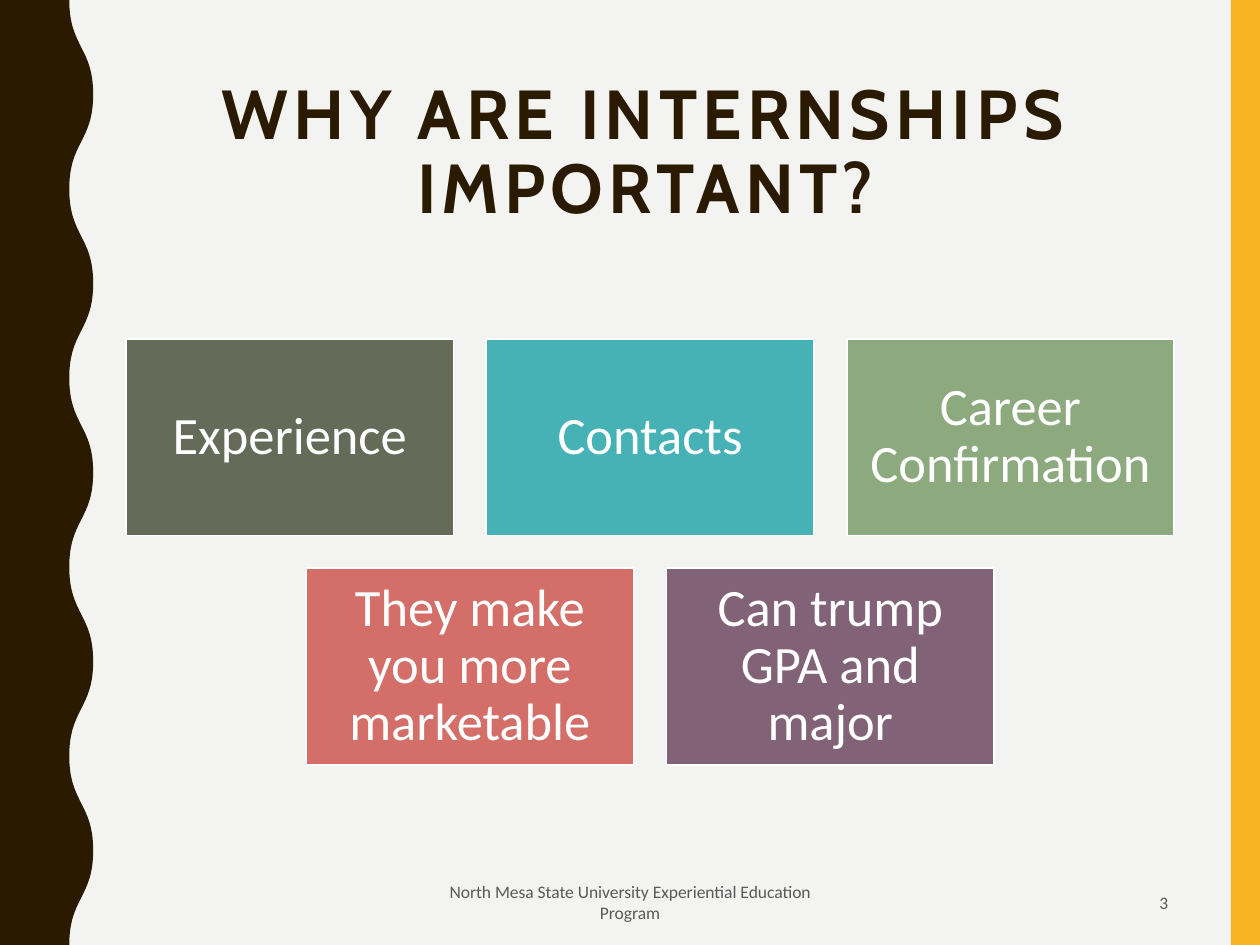
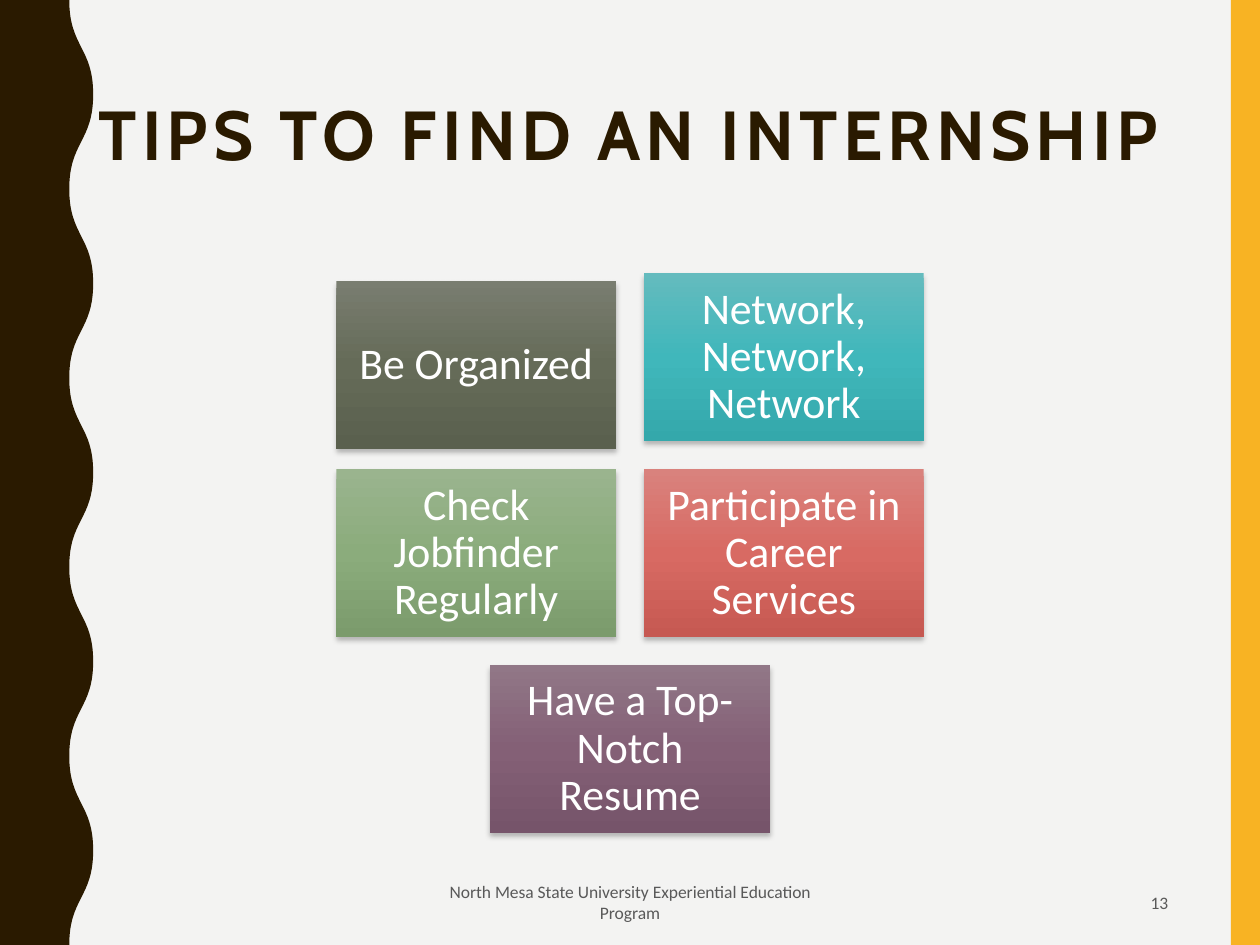
from copy import deepcopy

from lxml import etree
from pptx import Presentation
from pptx import util as u
from pptx.dml.color import RGBColor
from pptx.enum import shapes, text
from pptx.oxml.ns import qn

PAPER = RGBColor(0xF3, 0xF3, 0xF2)
BROWN = RGBColor(0x2A, 0x1A, 0x00)
GOLD = RGBColor(0xF8, 0xB3, 0x23)
GREY = RGBColor(0x59, 0x59, 0x59)
WHITE = RGBColor(0xFF, 0xFF, 0xFF)
PALE_TEAL = RGBColor(0x8F, 0xD2, 0xD4)
DEEP_TEAL = RGBColor(0x35, 0x85, 0x88)

FLAT_COLORS = [RGBColor.from_string(code) for code in
               ("656A59", "46B2B5", "8CAA7E", "D36F68", "826276")]
GRADIENTS = [[RGBColor.from_string(code) for code in codes.split()] for codes in
             ("797D70 656B58 5A604E", "64BBBE 40B7BB 34A8AB",
              "9AB48E 8BAC7C 7B9B6C", "D9827D D86A63 C65952",
              "917787 846076 76546A")]

TITLE_FONT, BODY_FONT = "Cabin", "Calibri"
SLIDE_WIDTH, SLIDE_HEIGHT = 10, 7.5
FOOTER = "North Mesa State University Experiential Education Program"


def style_run(run, font, size, color):
    run.font.name = font
    run.font.size = u.Pt(size)
    run.font.color.rgb = color


def paint(shape, color):
    shape.shadow.inherit = False
    shape.fill.solid()
    shape.fill.fore_color.rgb = color
    shape.line.fill.background()


def add_textbox(slide, box, anchor, alignment):
    """Add an empty wrapping text box and return its paragraph."""
    frame = slide.shapes.add_textbox(*map(u.Inches, box)).text_frame
    frame.word_wrap = True
    frame.vertical_anchor = anchor
    paragraph = frame.paragraphs[0]
    paragraph.alignment = alignment
    return paragraph


def bend_segment(segment, start, end):
    """Turn a straight outline segment into an S-curve with vertical ends."""
    middle = (start[1] + end[1]) // 2
    curve = etree.Element(qn("a:cubicBezTo"))
    for x, y in ((start[0], middle), (end[0], middle), end):
        etree.SubElement(curve, qn("a:pt"), x=str(x), y=str(y))
    segment.getparent().replace(segment, curve)


def add_wave(slide, trough=0.55, crest=0.74, half_wave=0.75):
    """Draw the dark left band, whose right edge swings between trough and crest."""
    units = 1000
    count = round(SLIDE_HEIGHT / half_wave)
    edge = [(round((crest if index % 2 else trough) * units),
             round(index * half_wave * units)) for index in range(count + 1)]
    builder = slide.shapes.build_freeform(*edge[0], scale=u.Inches(1) / units)
    builder.add_line_segments([*edge[1:], (0, edge[-1][1]), (0, 0)])
    wave = builder.convert_to_shape()
    segments = list(wave._element.spPr.iter(qn("a:lnTo")))
    for segment, start, end in zip(segments, edge, edge[1:]):
        bend_segment(segment, start, end)
    paint(wave, BROWN)


def add_frame(slide, number):
    """Add the background, side bands, footer and slide number."""
    slide.background.fill.solid()
    slide.background.fill.fore_color.rgb = PAPER
    band = slide.shapes.add_shape(
        shapes.MSO_SHAPE.RECTANGLE,
        *map(u.Inches, (9.77, 0, 0.23, SLIDE_HEIGHT)))
    paint(band, GOLD)
    add_wave(slide)
    for box, words, alignment in (
            ((3.31, 6.97, 3.38, 0.38), FOOTER, text.PP_ALIGN.CENTER),
            ((7.06, 6.97, 2.31, 0.38), str(number), text.PP_ALIGN.RIGHT)):
        paragraph = add_textbox(slide, box, text.MSO_ANCHOR.MIDDLE, alignment)
        paragraph.text = words
        style_run(paragraph.runs[0], BODY_FONT, 10, GREY)


def add_title(slide, left, top, parts):
    """Add the title; parts are (words, outline colour) pairs."""
    paragraph = add_textbox(slide, (left, top, 8.75, 0.6),
                            text.MSO_ANCHOR.TOP, text.PP_ALIGN.CENTER)
    paragraph.line_spacing = 0.9
    for words, outline_color in parts:
        run = paragraph.add_run()
        run.text = words
        style_run(run, TITLE_FONT, 39.6, BROWN)
        run.font.bold = True
        properties = run.font._element
        properties.set("spc", "300")
        outline = etree.Element(qn("a:ln"), w=str(u.Pt(0.75)))
        fill = etree.SubElement(outline, qn("a:solidFill"))
        etree.SubElement(fill, qn("a:srgbClr"), val=str(outline_color))
        properties.insert(0, outline)


def add_tile(slide, box, words, size, inset):
    tile = slide.shapes.add_shape(shapes.MSO_SHAPE.RECTANGLE, *map(u.Inches, box))
    tile.shadow.inherit = False
    frame = tile.text_frame
    frame.word_wrap = True
    frame.vertical_anchor = text.MSO_ANCHOR.MIDDLE
    frame.margin_left = frame.margin_right = u.Inches(inset)
    frame.margin_top = frame.margin_bottom = u.Inches(inset)
    frame.text = words
    paragraph = frame.paragraphs[0]
    paragraph.alignment = text.PP_ALIGN.CENTER
    paragraph.line_spacing = 0.9
    style_run(paragraph.runs[0], BODY_FONT, size, WHITE)
    return tile


def add_tile_rows(slide, center, top, width, rows, size, inset):
    """Stack centred rows of tiles, sized by their width, in reading order."""
    height, gap = width * 0.6, width * 0.1
    tiles = []
    for row_index, row in enumerate(rows):
        left = center - (len(row) * (width + gap) - gap) / 2
        for column, words in enumerate(row):
            box = (left + column * (width + gap),
                   top + row_index * (height + gap), width, height)
            tiles.append(add_tile(slide, box, words, size, inset))
    return tiles


def fill_gradient(tile, colors):
    """Fill from top to bottom with three colours and add a soft shadow below."""
    tile.line.fill.background()
    tile.fill.gradient()
    tile.fill.gradient_angle = 270
    properties = tile._element.spPr
    stop_list = properties.find(qn("a:gradFill")).find(qn("a:gsLst"))
    stop_list.append(deepcopy(stop_list[0]))
    for stop, position, color in zip(tile.fill.gradient_stops, (0, 0.5, 1), colors):
        stop.position = position
        stop.color.rgb = color
    shadow = etree.SubElement(
        properties.find(qn("a:effectLst")), qn("a:outerShdw"),
        blurRad=str(u.Pt(3)), dist=str(u.Pt(2)), dir="5400000", rotWithShape="0")
    black = etree.SubElement(shadow, qn("a:srgbClr"), val="000000")
    etree.SubElement(black, qn("a:alpha"), val="25000")


def add_importance_slide(slide):
    add_frame(slide, 3)
    add_title(slide, 0.75, 0.58, [("WHY ARE INTERNSHIPS IMPORTANT?", PALE_TEAL)])
    reasons = [["Experience", "Contacts", "Career Confirmation"],
               ["They make you more marketable", "Can trump GPA and major"]]
    tiles = add_tile_rows(slide, 5.16, 2.69, 2.6, reasons, 30, 0.12)
    for tile, color in zip(tiles, FLAT_COLORS):
        paint(tile, color)
        tile.line.color.rgb = WHITE
        tile.line.width = u.Pt(1)


def add_tips_slide(slide):
    add_frame(slide, 13)
    add_title(slide, 0.62, 0.75,
              [("TIPS", PALE_TEAL), (" TO FIND AN INTERNSHIP", DEEP_TEAL)])
    tips = [["Be Organized", "Network, Network, Network"],
            ["Check Jobfinder Regularly", "Participate in Career Services"],
            ["Have a Top-Notch Resume"]]
    tiles = add_tile_rows(slide, 5, 2.17, 2.22, tips, 25, 0.1)
    tiles[0].top += u.Inches(0.06)
    for tile, colors in zip(tiles, GRADIENTS):
        fill_gradient(tile, colors)


def main():
    presentation = Presentation()
    presentation.slide_width = u.Inches(SLIDE_WIDTH)
    presentation.slide_height = u.Inches(SLIDE_HEIGHT)
    blank = presentation.slide_layouts[6]
    for build in (add_importance_slide, add_tips_slide):
        build(presentation.slides.add_slide(blank))
    presentation.save("out.pptx")


if __name__ == "__main__":
    main()
